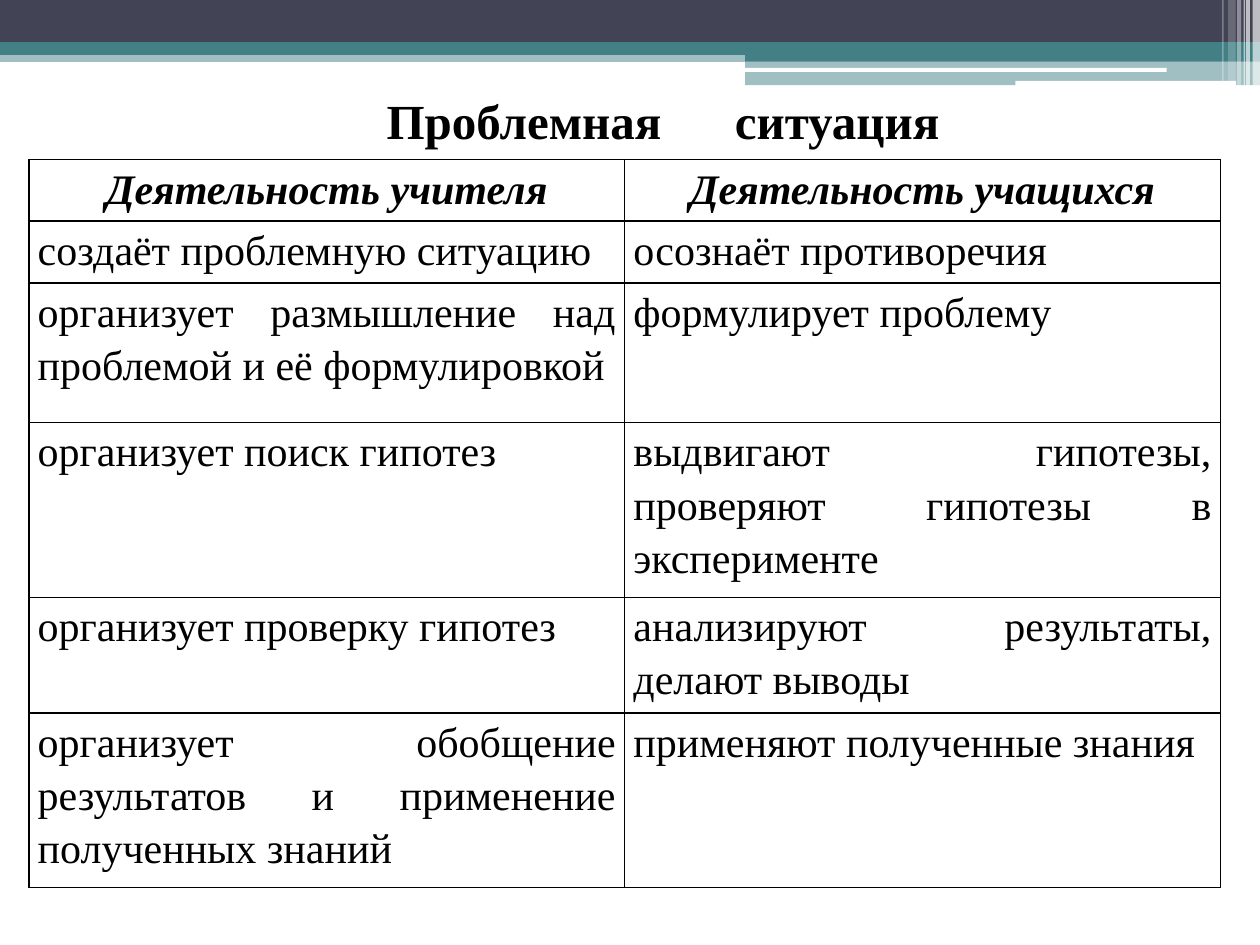
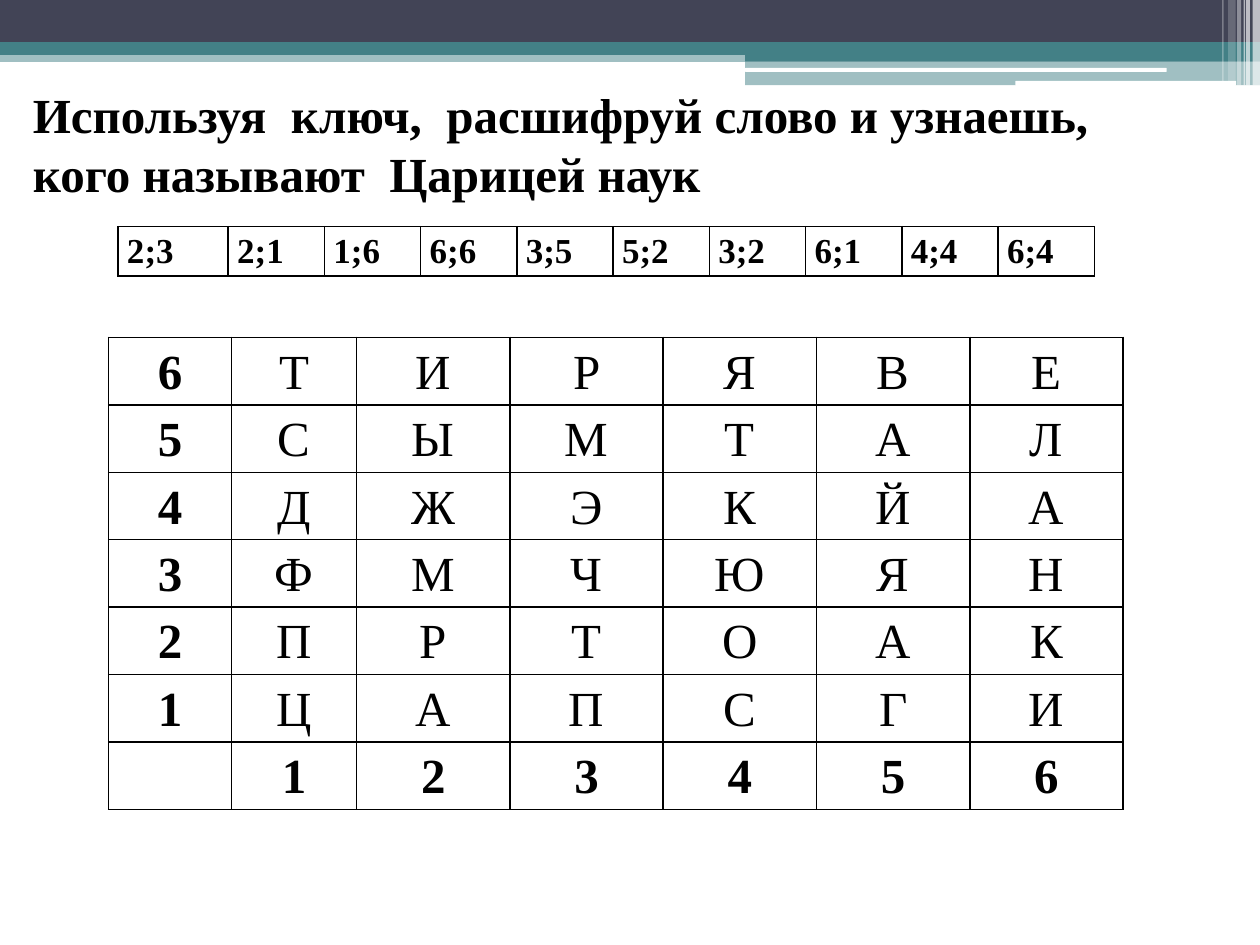
import pptx
import pptx.dml.color
import pptx.enum.shapes
import pptx.enum.text
import pptx.oxml
import pptx.oxml.ns
import pptx.util
from pptx.util import Cm

ALIGN = pptx.enum.text.PP_ALIGN
SHAPE = pptx.enum.shapes.MSO_SHAPE
NS = pptx.oxml.ns.nsdecls("a")

FONT = "Times New Roman"
INK, NAVY, TEAL, WHITE = "000000", "424456", "438086", "FFFFFF"

# Header bands: left, top, width, height in cm, colour, opacity in percent
BANDS = [
    (0, 1.02, 25.4, 0.23, TEAL, 50),
    (0, 0, 25.4, 0.85, NAVY, 100),
    (0, 0.85, 25.4, 0.26, TEAL, 100),
    (15.02, 0.99, 10.38, 0.25, TEAL, 100),
    (15.02, 1.24, 10.38, 0.48, TEAL, 50),
]
WHITE_LINES = [(15.02, 1.37, 8.5, 0.08), (20.47, 1.63, 4.45, 0.1)]
# Vertical strips in the corner: left, width, height in cm, opacity
STRIPS = [
    (25.25, 0.15, 1.73, 65),
    (25.12, 0.08, 1.73, 65),
    (25.07, 0.03, 1.73, 60),
    (24.94, 0.08, 1.73, 40),
    (24.76, 0.15, 1.63, 20),
    (24.64, 0.03, 1.63, 30),
]


def colour(hex_string):
    return pptx.dml.color.RGBColor.from_string(hex_string)


def write(frame, text, size=24, bold=False, italic=False, align=ALIGN.LEFT, spacing=1.0):
    """Fill a text frame with one formatted paragraph."""
    paragraph = frame.paragraphs[0]
    paragraph.alignment = align
    paragraph.line_spacing = spacing
    run = paragraph.add_run()
    run.text = text
    run.font.name = FONT
    run.font.size = pptx.util.Pt(size)
    run.font.bold = bold
    run.font.italic = italic
    run.font.color.rgb = colour(INK)
    return paragraph


class Deck:
    def __init__(self):
        self.file = pptx.Presentation()
        self.file.slide_width, self.file.slide_height = Cm(25.4), Cm(19.05)
        self.layout = self.file.slide_layouts.get_by_name("Title Only")
        self.slide = None

    def new_slide(self):
        self.slide = self.file.slides.add_slide(self.layout)

    def band(self, left, top, width, height, fill, opacity=100, kind=SHAPE.RECTANGLE):
        band = self.slide.shapes.add_shape(kind, Cm(left), Cm(top), Cm(width), Cm(height))
        band.shadow.inherit = False
        band.line.fill.background()
        band.fill.solid()
        band.fill.fore_color.rgb = colour(fill)
        if opacity < 100:
            tint = band.element.spPr.find(".//" + pptx.oxml.ns.qn("a:srgbClr"))
            tint.append(pptx.oxml.parse_xml(f'<a:alpha {NS} val="{opacity * 1000}"/>'))
        return band

    def header_on_layout(self):
        """Draw the header on the current slide, then move it to the shared layout."""
        bands = [self.band(*band) for band in BANDS]
        bands += [self.band(*line, WHITE, kind=SHAPE.ROUNDED_RECTANGLE) for line in WHITE_LINES]
        bands += [self.band(left, 0, width, height, WHITE, opacity)
                  for left, width, height, opacity in STRIPS]
        for holder in list(self.layout.placeholders):
            if holder.placeholder_format.idx > 0:
                holder.element.getparent().remove(holder.element)
        for band in bands:
            self.layout.shapes.element.append(band.element)

    def title(self, text, left, top, width, height, tab=None):
        title = self.slide.shapes.title
        title.left, title.top, title.width, title.height = map(Cm, (left, top, width, height))
        title.text_frame.word_wrap = True
        title.text_frame.auto_size = pptx.enum.text.MSO_AUTO_SIZE.NONE
        title.text_frame.vertical_anchor = pptx.enum.text.MSO_ANCHOR.MIDDLE
        paragraph = write(title.text_frame, text, size=28, bold=True)
        if tab:
            paragraph._p.get_or_add_pPr().append(pptx.oxml.parse_xml(
                f'<a:tabLst {NS}><a:tab pos="{Cm(tab)}" algn="l"/></a:tabLst>'))

    def table(self, rows, left, top, widths, heights, style):
        """Add a ruled table; style(row, column) gives the text format of a cell."""
        table = self.slide.shapes.add_table(
            len(rows), len(widths), Cm(left), Cm(top),
            Cm(sum(widths)), Cm(sum(heights))).table
        table.first_row = table.horz_banding = False
        for column, width in zip(table.columns, widths):
            column.width = Cm(width)
        for r, (texts, height) in enumerate(zip(rows, heights)):
            table.rows[r].height = Cm(height)
            for c, text in enumerate(texts):
                cell = table.cell(r, c)
                self.rule(cell)
                cell.margin_left = cell.margin_right = Cm(0.18)
                cell.margin_top = cell.margin_bottom = 0
                if text:
                    write(cell.text_frame, text, spacing=1.15, **style(r, c))

    def rule(self, cell):
        cell.fill.background()
        properties = cell._tc.get_or_add_tcPr()
        for position, side in enumerate(("lnL", "lnR", "lnT", "lnB")):
            properties.insert(position, pptx.oxml.parse_xml(
                f'<a:{side} {NS} w="12700"><a:solidFill><a:srgbClr val="{INK}"/>'
                f'</a:solidFill></a:{side}>'))


def problem_situation(deck):
    deck.title("Проблемная\tситуация", 7.54, 1.7, 12.9, 1.45, tab=7.02)
    activities = [
        ("Деятельность учителя", "Деятельность учащихся"),
        ("создаёт проблемную ситуацию", "осознаёт противоречия"),
        ("организует размышление над проблемой и её формулировкой", "формулирует проблему"),
        ("организует поиск гипотез", "выдвигают гипотезы, проверяют гипотезы в эксперименте"),
        ("организует проверку гипотез", "анализируют результаты, делают выводы"),
        ("организует обобщение результатов и применение полученных знаний",
         "применяют полученные знания"),
    ]

    def style(row, column):
        heading = row == 0
        return dict(bold=heading, italic=heading,
                    align=ALIGN.CENTER if heading else ALIGN.JUSTIFY)

    deck.table(activities, 0.58, 3.22, [12.01] * 2,
               [1.24, 1.24, 2.82, 3.52, 2.33, 3.52], style)


def cipher(deck):
    deck.title("Используя  ключ,  расшифруй слово и узнаешь,  кого называют  Царицей наук",
               0.41, 1.57, 24.2, 2.64)

    # Coded word: column and row of each letter
    code = "2;3 2;1 1;6 6;6 3;5 5;2 3;2 6;1 4;4 6;4".split()
    deck.table([code], 2.38, 4.57, [2.22] + [1.94] * 9, [0.99],
               lambda row, column: dict(size=20, bold=True))

    # Key: row numbers count down on the left, column numbers run along the bottom
    letters = ["ТИРЯВЕ", "СЫМТАЛ", "ДЖЭКЙА", "ФМЧЮЯН", "ПРТОАК", "ЦАПСГИ"]
    key = [[str(6 - i), *line] for i, line in enumerate(letters)] + [["", *"123456"]]
    deck.table(key, 2.19, 6.8, [2.48, 2.52] + [3.09] * 5, [1.36] * 7,
               lambda row, column: dict(size=28, bold=column == 0 or row == 6,
                                        align=ALIGN.CENTER))


def main():
    deck = Deck()
    deck.new_slide()
    deck.header_on_layout()
    problem_situation(deck)
    deck.new_slide()
    cipher(deck)
    deck.file.save("out.pptx")


if __name__ == "__main__":
    main()
